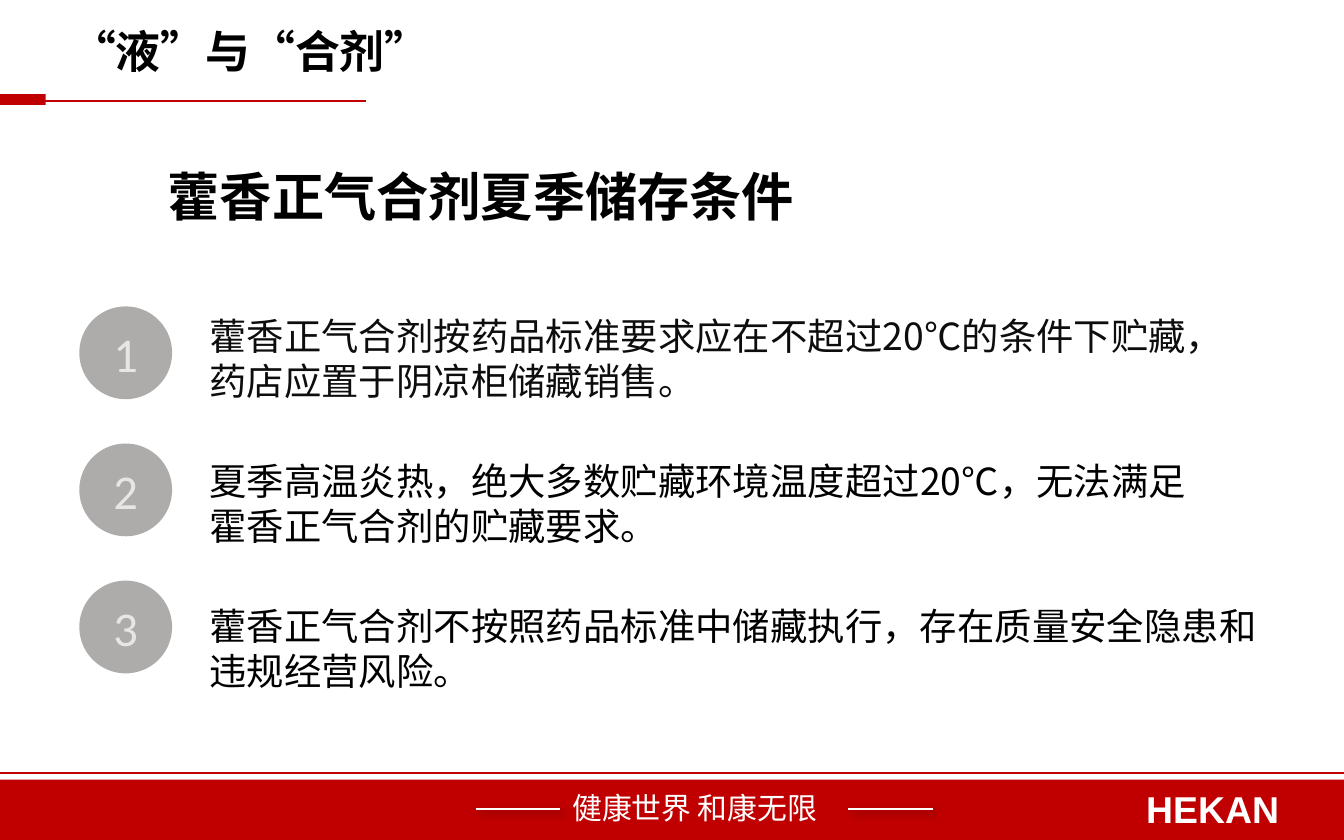
from lxml.etree import SubElement
from pptx import Presentation
from pptx.dml.color import RGBColor
from pptx.enum.shapes import MSO_CONNECTOR, MSO_SHAPE
from pptx.enum.text import MSO_ANCHOR, MSO_AUTO_SIZE, PP_ALIGN
from pptx.oxml.ns import qn
from pptx.util import Inches, Pt

# Content
TITLE = "“液”与“合剂”"
HEADING = "藿香正气合剂夏季储存条件"
POINTS = [  # text, box width, colour name
    ("藿香正气合剂按药品标准要求应在不超过20℃的条件下贮藏，药店应置于阴凉柜储藏销售。", 7.5, "soft_black"),
    ("夏季高温炎热，绝大多数贮藏环境温度超过20℃，无法满足霍香正气合剂的贮藏要求。", 7.72, "black"),
    ("藿香正气合剂不按照药品标准中储藏执行，存在质量安全隐患和违规经营风险。", 8.16, "black"),
]
SLOGAN = "健康世界 和康无限"
BRAND = "HEKAN"

THEME = {
    "red": "C00000", "white": "FFFFFF", "black": "000000",
    "soft_black": "0D0D0D", "grey": "AEABAB", "pale": "E7E6E6",
    "cjk": "Noto Sans CJK SC", "latin": "Arial", "number": "Calibri",
    "title": 24, "heading": 28, "body": 20, "badge": 26, "slogan": 16, "brand": 20,
}

# Layout in inches
WIDTH, HEIGHT = 10, 6.25
BADGE_LEFT, BADGE_SIZE, BADGE_PITCH = 0.59, 0.69, 1.02
POINT_LEFT, POINT_TOP, POINT_PITCH, POINT_HEIGHT = 1.46, 2.28, 1.08, 0.77
DASH_LEFTS, DASH_LENGTH, DASH_TOP = (3.54, 6.31), 0.63, 6.02


def color(name):
    return RGBColor.from_string(THEME[name])


def write(shape, text, size, font, fill, bold=False):
    paragraph = shape.text_frame.paragraphs[0]
    run = paragraph.add_run()
    run.text = text
    run.font.name = THEME[font]
    run.font.size = Pt(THEME[size])
    run.font.bold = bold
    run.font.color.rgb = color(fill)
    # East Asian characters take their own typeface setting
    east_asian = SubElement(run.font._element, qn("a:ea"))
    east_asian.set("typeface", THEME[font])
    return paragraph


def add_text(slide, box, text, size, font, fill, bold=False, wrap=True):
    shape = slide.shapes.add_textbox(*map(Inches, box))
    shape.text_frame.word_wrap = wrap
    shape.text_frame.auto_size = MSO_AUTO_SIZE.SHAPE_TO_FIT_TEXT
    write(shape, text, size, font, fill, bold)


def add_block(slide, kind, box, fill):
    shape = slide.shapes.add_shape(kind, *map(Inches, box))
    shape.shadow.inherit = False
    shape.fill.solid()
    shape.fill.fore_color.rgb = color(fill)
    shape.line.fill.background()
    return shape


def add_rule(slide, left, right, top, fill, width=1, shadow=False):
    rule = slide.shapes.add_connector(
        MSO_CONNECTOR.STRAIGHT, Inches(left), Inches(top), Inches(right), Inches(top))
    rule.line.color.rgb = color(fill)
    rule.line.width = Pt(width)
    effects = SubElement(rule._element.spPr, qn("a:effectLst"))
    if shadow:
        outer = SubElement(effects, qn("a:outerShdw"), blurRad=str(Pt(4)),
                           dist=str(Pt(3)), dir=str(45 * 60000))
        shade = SubElement(outer, qn("a:srgbClr"), val=THEME["black"])
        SubElement(shade, qn("a:alpha"), val="40000")


def add_footer(slide):
    add_rule(slide, 0, WIDTH, 5.75, "red")
    add_block(slide, MSO_SHAPE.RECTANGLE, (0, 5.8, WIDTH, HEIGHT - 5.8), "red")
    add_text(slide, (4.16, 5.83, 2.31, 0.37), SLOGAN, "slogan", "cjk", "white")
    for left in DASH_LEFTS:
        add_rule(slide, left, left + DASH_LENGTH, DASH_TOP, "white", shadow=True)
    add_text(slide, (8.43, 5.8, 1.22, 0.44), BRAND, "brand", "latin", "white", True, False)


def add_header(slide):
    add_rule(slide, 0.33, 2.72, 0.75, "red", 0.79)
    add_block(slide, MSO_SHAPE.RECTANGLE, (0, 0.7, 0.34, 0.08), "red")
    add_text(slide, (0.43, 0.13, 2.89, 0.5), TITLE, "title", "cjk", "black", True)
    add_text(slide, (1.15, 1.17, 4.92, 0.57), HEADING, "heading", "cjk", "black", True)


def add_points(slide):
    for index, (text, width, fill) in enumerate(POINTS):
        # Numbered badge
        badge_top = POINT_TOP + index * BADGE_PITCH
        badge = add_block(slide, MSO_SHAPE.OVAL,
                          (BADGE_LEFT, badge_top, BADGE_SIZE, BADGE_SIZE), "grey")
        frame = badge.text_frame
        frame.margin_left = frame.margin_right = 0
        frame.margin_top = frame.margin_bottom = 0
        frame.vertical_anchor = MSO_ANCHOR.MIDDLE
        paragraph = write(badge, str(index + 1), "badge", "number", "pale")
        paragraph.alignment = PP_ALIGN.CENTER
        # Statement
        top = POINT_TOP + index * POINT_PITCH
        add_text(slide, (POINT_LEFT, top, width, POINT_HEIGHT), text, "body", "cjk", fill)


def main():
    presentation = Presentation()
    presentation.slide_width = Inches(WIDTH)
    presentation.slide_height = Inches(HEIGHT)
    slide = presentation.slides.add_slide(presentation.slide_layouts[6])
    add_footer(slide)
    add_header(slide)
    add_points(slide)
    presentation.save("out.pptx")


if __name__ == "__main__":
    main()
